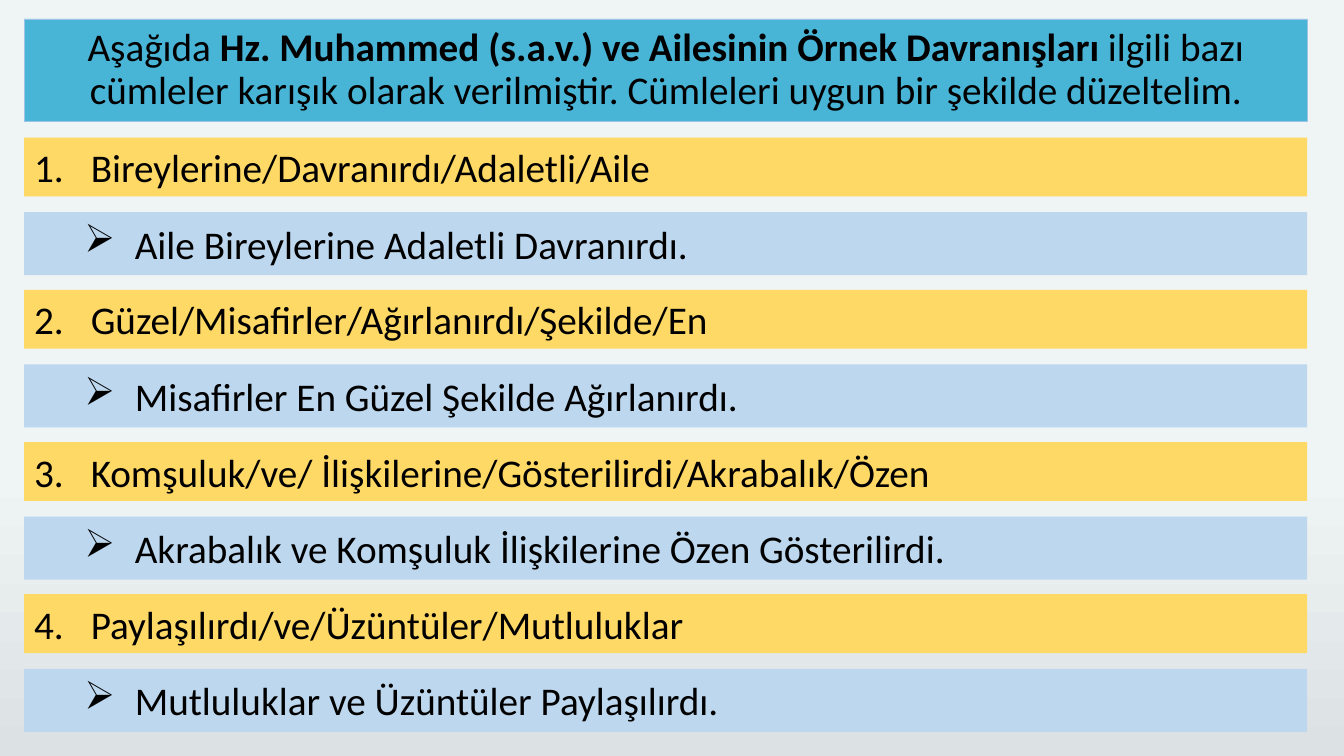
from lxml.etree import SubElement
from pptx import Presentation
from pptx.dml.color import RGBColor
from pptx.enum.shapes import MSO_SHAPE
from pptx.enum.text import MSO_ANCHOR, PP_ALIGN
from pptx.oxml.ns import qn
from pptx.util import Pt

PX = 9525
BLACK = RGBColor(0x00, 0x00, 0x00)
TEAL = RGBColor(0x48, 0xB4, 0xD6)
YELLOW = RGBColor(0xFF, 0xD9, 0x66)
PALE_BLUE = RGBColor(0xBD, 0xD7, 0xEE)
BORDER_BLUE = RGBColor(0x9D, 0xC3, 0xE6)
MIST = RGBColor(0xEF, 0xF4, 0xF5)
GREY = RGBColor(0xDC, 0xE1, 0xE4)

LEFT, WIDTH = 23, 1222
FIRST_TOP, PAIR_PITCH, ANSWER_OFFSET = 131, 145, 71

INSTRUCTION = [
    ("Aşağıda ", False),
    ("Hz. Muhammed (s.a.v.) ve Ailesinin Örnek Davranışları ", True),
    ("ilgili bazı cümleler karışık olarak verilmiştir. "
     "Cümleleri uygun bir şekilde düzeltelim.", False),
]
SENTENCES = [
    ("Bireylerine/Davranırdı/Adaletli/Aile",
     "Aile Bireylerine Adaletli Davranırdı."),
    ("Güzel/Misafirler/Ağırlanırdı/Şekilde/En",
     "Misafirler En Güzel Şekilde Ağırlanırdı."),
    ("Komşuluk/ve/ İlişkilerine/Gösterilirdi/Akrabalık/Özen",
     "Akrabalık ve Komşuluk İlişkilerine Özen Gösterilirdi."),
    ("Paylaşılırdı/ve/Üzüntüler/Mutluluklar",
     "Mutluluklar ve Üzüntüler Paylaşılırdı."),
]


def add_bar(top, height, color, align):
    bar = slide.shapes.add_shape(
        MSO_SHAPE.RECTANGLE, LEFT * PX, top * PX, WIDTH * PX, height * PX)
    bar.shadow.inherit = False
    bar.fill.solid()
    bar.fill.fore_color.rgb = color
    bar.line.fill.background()
    bar.text_frame.word_wrap = True
    bar.text_frame.vertical_anchor = MSO_ANCHOR.MIDDLE
    paragraph = bar.text_frame.paragraphs[0]
    paragraph.alignment = align
    paragraph.font.name = "Calibri"
    paragraph.font.size = Pt(28)
    paragraph.font.color.rgb = BLACK
    return bar, paragraph


def set_bullet(paragraph, indent, hanging, tag, **attributes):
    properties = paragraph._p.get_or_add_pPr()
    properties.set("marL", str(indent * PX))
    properties.set("indent", str(-hanging * PX))
    bullet = SubElement(properties, qn(tag), attributes)
    properties.find(qn("a:defRPr")).addprevious(bullet)


presentation = Presentation()
presentation.slide_width = 1280 * PX
presentation.slide_height = 720 * PX
slide = presentation.slides.add_slide(presentation.slide_layouts[6])

backdrop = slide.background.fill
backdrop.gradient()
backdrop.gradient_angle = 270
for stop, position, color in zip(backdrop.gradient_stops, (0.62, 1), (MIST, GREY)):
    stop.position = position
    stop.color.rgb = color

header, instruction = add_bar(18, 98, TEAL, PP_ALIGN.CENTER)
header.line.color.rgb = BORDER_BLUE
header.line.width = Pt(0.5)
instruction.line_spacing = 0.9
for words, bold in INSTRUCTION:
    run = instruction.add_run()
    run.text = words
    run.font.bold = bold

for index, (scrambled, solved) in enumerate(SENTENCES):
    top = FIRST_TOP + index * PAIR_PITCH

    _, question = add_bar(top, 56, YELLOW, PP_ALIGN.LEFT)
    question.text = scrambled
    set_bullet(question, 54, 54, "a:buAutoNum",
               type="arabicPeriod", startAt=str(index + 1))

    _, answer = add_bar(top + ANSWER_OFFSET, 60, PALE_BLUE, PP_ALIGN.LEFT)
    answer.text = solved
    answer.level = 1
    set_bullet(answer, 96, 48, "a:buChar", char="➢")

presentation.save("out.pptx")
